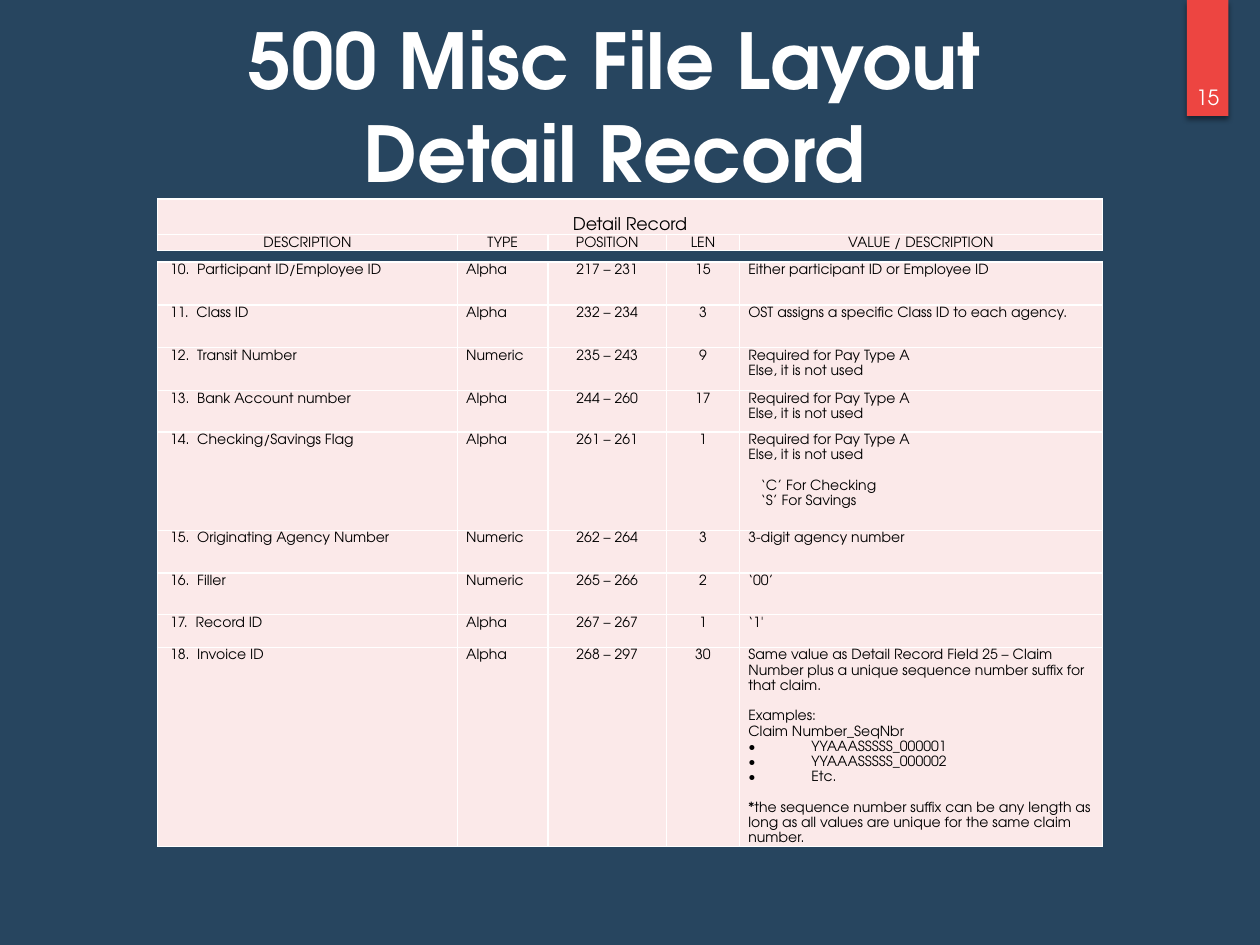
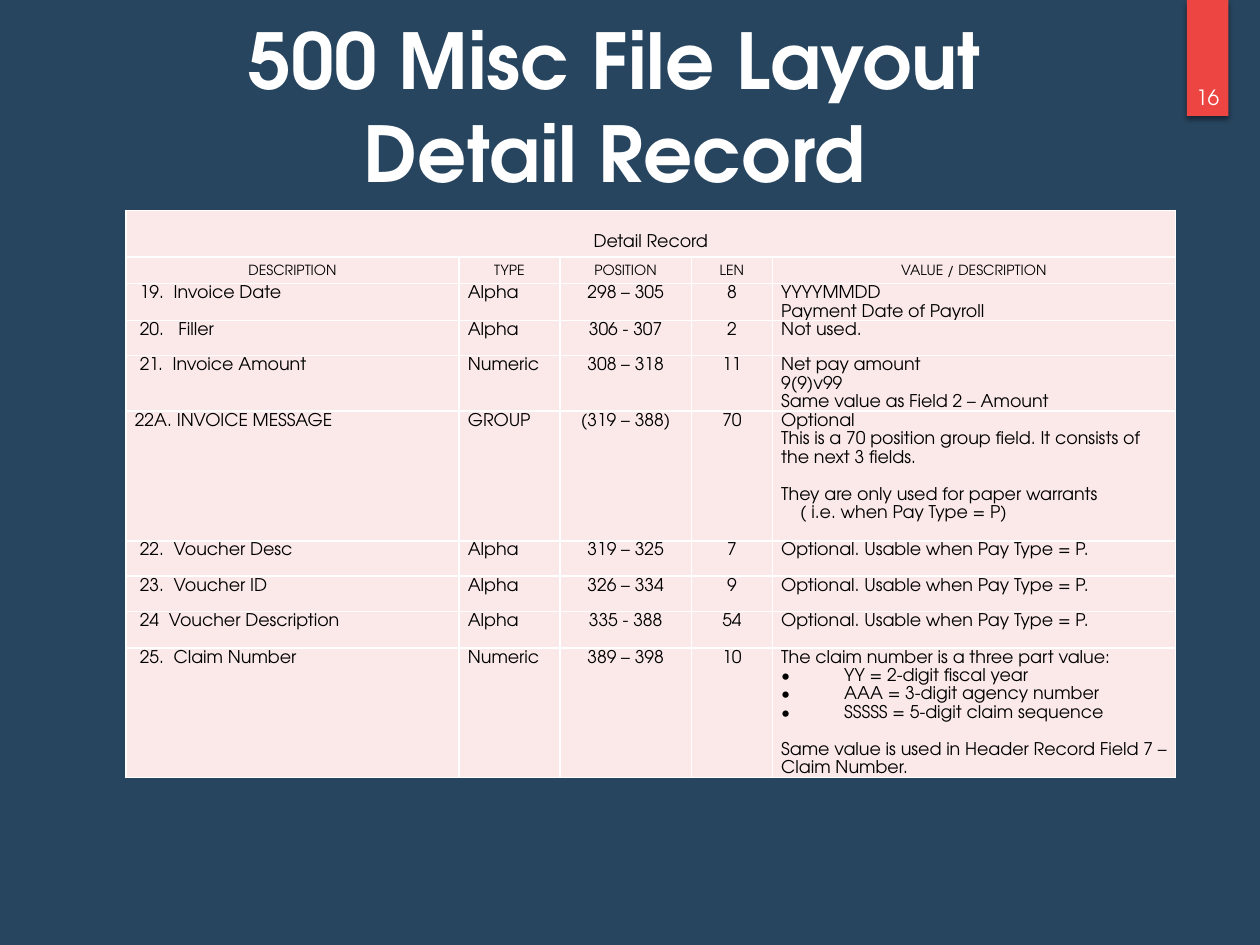
from dataclasses import dataclass

from lxml import etree
from pptx import Presentation
from pptx.dml.color import RGBColor
from pptx.enum import shapes, text
from pptx.oxml.ns import qn
from pptx.util import Inches, Pt


class Theme:
    font = "TeX Gyre Adventor"
    background = RGBColor.from_string("27455F")
    band = RGBColor.from_string("ED4541")
    cell = RGBColor.from_string("FBE9E9")
    light = RGBColor.from_string("FFFFFF")
    dark = RGBColor.from_string("000000")
    title_size = 44
    number_size = 12
    caption_size = 10
    heading_size = 8
    line_pitches = {8: 8.7, 10: 10.55}
    border_width = 1


TITLE = "500 Misc File Layout\vDetail Record"
CAPTION = "Detail Record"
HEADINGS = ["DESCRIPTION", "TYPE", "POSITION", "LEN", "VALUE / DESCRIPTION"]
COLUMN_WIDTHS = [2.38, 0.72, 0.94, 0.58, 2.88]
CENTERED_COLUMNS = (2, 3)
BULLET_INDENT = 0.5
CAPTION_TOP_INSET = 0.13


@dataclass
class Line:
    """One paragraph of a cell; gap puts an empty line's height above it."""
    text: str
    indent: float = 0
    bullet: bool = False
    gap: bool = False


@dataclass
class Layout:
    left: float
    width: float
    header_top: float
    header_heights: tuple
    body_top: float
    body_size: int
    description_indent: float


PAY_TYPE_A = ["Required for Pay Type A", "Else, it is not used"]
PAY_TYPE_P = ["Optional. Usable when Pay Type = P."]

# Each row: height, description, type, position, length, value lines
FIELDS_10_TO_18 = [
    (0.34, "10.  Participant ID/Employee ID", "Alpha", "217 – 231", "15",
     ["Either participant ID or Employee ID"]),
    (0.34, "11.  Class ID", "Alpha", "232 – 234", "3",
     ["OST assigns a specific Class ID to each agency."]),
    (0.34, "12.  Transit Number", "Numeric", "235 – 243", "9", PAY_TYPE_A),
    (0.33, "13.  Bank Account number", "Alpha", "244 – 260", "17", PAY_TYPE_A),
    (0.78, "14.  Checking/Savings Flag", "Alpha", "261 – 261", "1",
     PAY_TYPE_A + [Line("‘C’ For Checking", indent=0.1, gap=True),
                   Line("‘S’ For Savings", indent=0.1)]),
    (0.34, "15.  Originating Agency Number", "Numeric", "262 – 264", "3",
     ["3-digit agency number"]),
    (0.33, "16.  Filler", "Numeric", "265 – 266", "2", ["‘00’"]),
    (0.26, "17.  Record ID", "Alpha", "267 – 267", "1", ["‘1'"]),
    (1.58, "18.  Invoice ID", "Alpha", "268 – 297", "30",
     ["Same value as Detail Record Field 25 – Claim Number plus a unique "
      "sequence number suffix for that claim.",
      Line("Examples:", gap=True),
      "Claim Number_SeqNbr",
      Line("YYAAASSSSS_000001", bullet=True),
      Line("YYAAASSSSS_000002", bullet=True),
      Line("Etc.", bullet=True),
      Line("*the sequence number suffix can be any length as long as all "
           "values are unique for the same claim number.", gap=True)]),
]

FIELDS_19_TO_25 = [
    (0.29, "19.  Invoice Date", "Alpha", "298 – 305", "8",
     ["YYYYMMDD", "Payment Date of Payroll"]),
    (0.28, "20.   Filler", "Alpha", "306 - 307", "2", ["Not used."]),
    (0.44, "21.  Invoice Amount", "Numeric", "308 – 318", "11",
     ["Net pay amount", "9(9)v99", "Same value as Field 2 – Amount"]),
    (1.03, Line("22A. INVOICE MESSAGE"), "GROUP", "(319 – 388)", "70",
     ["Optional",
      "This is a 70 position group field. It consists of the next 3 fields.",
      Line("They are only used for paper warrants", gap=True),
      Line("( i.e. when Pay Type = P)", indent=0.15)]),
    (0.28, "22.  Voucher Desc", "Alpha", "319 – 325", "7", PAY_TYPE_P),
    (0.28, "23.  Voucher ID", "Alpha", "326 – 334", "9", PAY_TYPE_P),
    (0.29, "24  Voucher Description", "Alpha", "335 - 388", "54", PAY_TYPE_P),
    (1.03, "25.  Claim Number", "Numeric", "389 – 398", "10",
     ["The claim number is a three part value:",
      Line("YY = 2-digit fiscal year", bullet=True),
      Line("AAA = 3-digit agency number", bullet=True),
      Line("SSSSS = 5-digit claim sequence", bullet=True),
      Line("Same value is used in Header Record Field 7 – Claim Number.",
           gap=True)]),
]


def style_paragraph(paragraph, size, color, centered=False, bold=False):
    font = paragraph.font
    font.name, font.size, font.bold = Theme.font, Pt(size), bold
    font.color.rgb = color
    paragraph.alignment = text.PP_ALIGN.CENTER if centered else text.PP_ALIGN.LEFT


def add_label(slide, box, content, size, anchor, bold=False, side_inset=0.1):
    shape = slide.shapes.add_textbox(*map(Inches, box))
    frame = shape.text_frame
    frame.word_wrap = True
    frame.vertical_anchor = anchor
    frame.margin_left = frame.margin_right = Inches(side_inset)
    frame.text = content
    style_paragraph(frame.paragraphs[0], size, Theme.light, True, bold)


def add_shadow(shape):
    properties = shape._element.spPr
    effects = etree.SubElement(properties, qn("a:effectLst"))
    shadow = etree.SubElement(effects, qn("a:outerShdw"), blurRad=str(Pt(3)),
                              dist=str(Pt(2)), dir="5400000", rotWithShape="0")
    color = etree.SubElement(shadow, qn("a:srgbClr"), val=str(Theme.dark))
    etree.SubElement(color, qn("a:alpha"), val="45000")


def add_number_band(slide, number, left=9.42, width=0.33, height=0.92):
    band = slide.shapes.add_shape(shapes.MSO_SHAPE.RECTANGLE, Inches(left), 0,
                                  Inches(width), Inches(height))
    band.fill.solid()
    band.fill.fore_color.rgb = Theme.band
    band.line.fill.background()
    add_shadow(band)
    add_label(slide, (left, height - 0.55, width, 0.55), str(number),
              Theme.number_size, text.MSO_ANCHOR.BOTTOM, side_inset=0)


def set_borders(cell):
    properties = cell._tc.get_or_add_tcPr()
    for position, side in enumerate(("a:lnL", "a:lnR", "a:lnT", "a:lnB")):
        line = etree.Element(qn(side), w=str(Pt(Theme.border_width)))
        fill = etree.SubElement(line, qn("a:solidFill"))
        etree.SubElement(fill, qn("a:srgbClr"), val=str(Theme.light))
        properties.insert(position, line)


def set_indent(paragraph, line):
    properties = paragraph._p.get_or_add_pPr()
    if line.bullet:
        properties.set("marL", str(Inches(BULLET_INDENT)))
        properties.set("indent", str(-Inches(BULLET_INDENT)))
        etree.SubElement(properties, qn("a:buFont"), typeface=Theme.font)
        etree.SubElement(properties, qn("a:buChar"), char="•")
    elif line.indent:
        properties.set("marL", str(Inches(line.indent)))


def fill_cell(cell, lines, size, centered, anchor, side_inset, top_inset=0):
    cell.fill.solid()
    cell.fill.fore_color.rgb = Theme.cell
    set_borders(cell)
    cell.vertical_anchor = anchor
    cell.margin_left = cell.margin_right = Inches(side_inset)
    cell.margin_top, cell.margin_bottom = Inches(top_inset), 0
    frame = cell.text_frame
    pitch = Pt(Theme.line_pitches[size])
    for index, line in enumerate(lines):
        if isinstance(line, str):
            line = Line(line)
        paragraph = frame.add_paragraph() if index else frame.paragraphs[0]
        paragraph.text = line.text
        paragraph.line_spacing = pitch
        if line.gap:
            paragraph.space_before = pitch
        set_indent(paragraph, line)
        style_paragraph(paragraph, size, Theme.dark, centered)


def add_grid(slide, left, top, width, heights):
    """Add an unstyled table whose columns share the width in fixed ratio."""
    frame = slide.shapes.add_table(len(heights), len(COLUMN_WIDTHS), Inches(left),
                                   Inches(top), Inches(width), Inches(sum(heights)))
    table = frame.table
    table.first_row = table.horz_banding = False
    for column, share in zip(table.columns, COLUMN_WIDTHS):
        column.width = Inches(width * share / sum(COLUMN_WIDTHS))
    for row, height in zip(table.rows, heights):
        row.height = Inches(height)
    return table


def add_header_table(slide, layout):
    table = add_grid(slide, layout.left, layout.header_top, layout.width,
                     layout.header_heights)
    caption = table.cell(0, 0)
    caption.merge(table.cell(0, len(HEADINGS) - 1))
    fill_cell(caption, [CAPTION], Theme.caption_size, True,
              text.MSO_ANCHOR.MIDDLE, 0.05, CAPTION_TOP_INSET)
    for column, heading in enumerate(HEADINGS):
        fill_cell(table.cell(1, column), [heading], Theme.heading_size, True,
                  text.MSO_ANCHOR.MIDDLE, 0.05)


def add_field_table(slide, layout, fields):
    table = add_grid(slide, layout.left, layout.body_top, layout.width,
                     [field[0] for field in fields])
    for row, (_, description, kind, position, length, value) in enumerate(fields):
        if isinstance(description, str):
            description = Line(description, indent=layout.description_indent)
        contents = [[description], [kind], [position], [length], value]
        for column, lines in enumerate(contents):
            fill_cell(table.cell(row, column), lines, layout.body_size,
                      column in CENTERED_COLUMNS, text.MSO_ANCHOR.TOP, 0.07)


def add_record_slide(presentation, number, layout, fields):
    slide = presentation.slides.add_slide(presentation.slide_layouts[6])
    slide.background.fill.solid()
    slide.background.fill.fore_color.rgb = Theme.background
    add_label(slide, (0.67, 0.17, 8.42, 1.33), TITLE, Theme.title_size,
              text.MSO_ANCHOR.MIDDLE, bold=True)
    add_number_band(slide, number)
    add_field_table(slide, layout, fields)
    add_header_table(slide, layout)


def main():
    presentation = Presentation()
    presentation.slide_width, presentation.slide_height = Inches(10), Inches(7.5)
    add_record_slide(presentation, 15,
                     Layout(1.25, 7.5, 1.58, (0.28, 0.13), 2.08, 8, 0.03),
                     FIELDS_10_TO_18)
    add_record_slide(presentation, 16,
                     Layout(1, 8.33, 1.67, (0.37, 0.21), 2.25, 10, 0.04),
                     FIELDS_19_TO_25)
    presentation.save("out.pptx")


if __name__ == "__main__":
    main()
